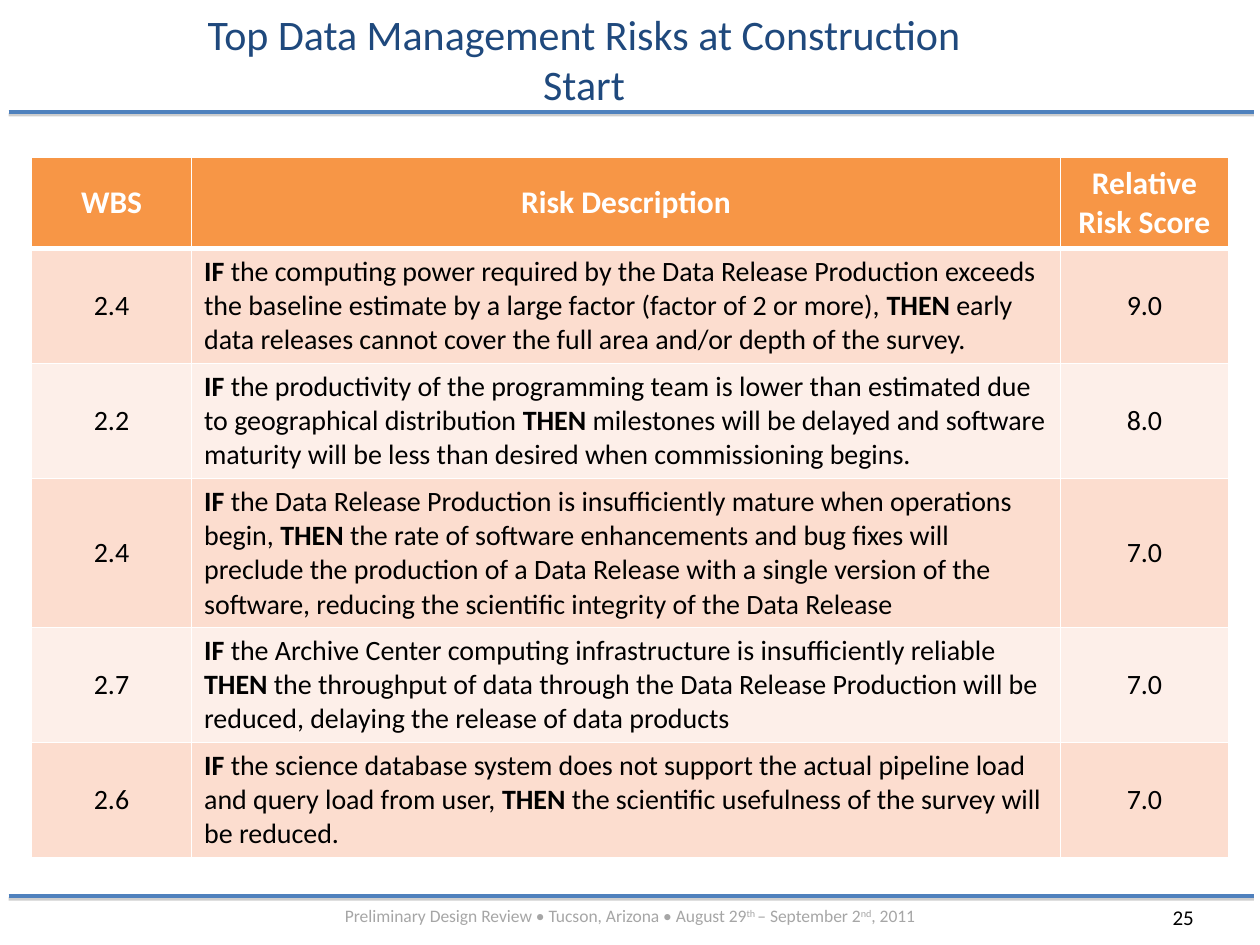
from dataclasses import dataclass

import lxml.etree
import pptx
import pptx.dml.color
import pptx.enum.shapes
import pptx.enum.text
import pptx.oxml
import pptx.oxml.ns
import pptx.util

Pt = pptx.util.Pt
ALIGN = pptx.enum.text.PP_ALIGN
ANCHOR = pptx.enum.text.MSO_ANCHOR
qn = pptx.oxml.ns.qn


@dataclass(frozen=True)
class Theme:
    font: str = "Calibri"
    title: str = "1F497D"
    rule: str = "4F81BD"
    shadow: str = "808080"
    footer: str = "A6A6A6"
    ink: str = "000000"
    white: str = "FFFFFF"
    header: str = "F79646"
    bands: tuple = ("FCDDCF", "FDEFE9")
    title_size: float = 24
    header_size: float = 18
    body_size: float = 16
    number_size: float = 12
    footer_size: float = 10


THEME = Theme()

HEADINGS = ("WBS", "Risk Description", "Relative Risk Score")
RISKS = (
    ("2.4",
     " the computing power required by the Data Release Production exceeds the baseline "
     "estimate by a large factor (factor of 2 or more), ",
     " early data releases cannot cover the full area and/or depth of the survey.",
     "9.0", 3),
    ("2.2",
     " the productivity of the programming team is lower than estimated due to "
     "geographical distribution ",
     " milestones will be delayed and software maturity will be less than desired "
     "when commissioning begins.",
     "8.0", 3),
    ("2.4",
     " the Data Release Production is insufficiently mature when operations begin, ",
     " the rate of software enhancements and bug fixes will preclude the production of a "
     "Data Release with a single version of the software, reducing the scientific "
     "integrity of the Data Release",
     "7.0", 4),
    ("2.7",
     " the Archive Center computing infrastructure is insufficiently reliable ",
     " the throughput of data through the Data Release Production will be reduced, "
     "delaying the release of data products",
     "7.0", 3),
    ("2.6",
     " the science database system does not support the actual pipeline load and query "
     "load from user, ",
     " the scientific usefulness of the survey will be reduced.",
     "7.0", 3),
)


def rgb(value):
    return pptx.dml.color.RGBColor.from_string(value)


def add_run(paragraph, text, size, color, bold=False, raised=False):
    run = paragraph.add_run()
    run.text = text
    run.font.name = THEME.font
    run.font.size = Pt(size)
    run.font.bold = bold
    run.font.color.rgb = rgb(color)
    if raised:
        run.font._element.set("baseline", "30000")


def add_label(slide, box, align, anchor=ANCHOR.TOP):
    frame = slide.shapes.add_textbox(*map(Pt, box)).text_frame
    frame.word_wrap = True
    frame.vertical_anchor = anchor
    frame.paragraphs[0].alignment = align
    return frame.paragraphs[0]


def add_rule(slide, left, top, width):
    rule = slide.shapes.add_connector(
        pptx.enum.shapes.MSO_CONNECTOR.STRAIGHT,
        Pt(left), Pt(top), Pt(left + width), Pt(top))
    rule.line.color.rgb = rgb(THEME.rule)
    rule.line.width = Pt(2)
    effects = lxml.etree.SubElement(rule._element.spPr, qn("a:effectLst"))
    shadow = lxml.etree.SubElement(
        effects, qn("a:outerShdw"), blurRad="0", dist=str(Pt(1.6)),
        dir="5400000", rotWithShape="0")
    tint = lxml.etree.SubElement(shadow, qn("a:srgbClr"), val=THEME.shadow)
    lxml.etree.SubElement(tint, qn("a:alpha"), val="38000")


def add_title(slide, box):
    title = add_label(slide, box, ALIGN.CENTER, ANCHOR.MIDDLE)
    add_run(title, "Top Data Management Risks at Construction Start",
            THEME.title_size, THEME.title)


def style_cell(cell, fill, top=1, bottom=1):
    cell.fill.solid()
    cell.fill.fore_color.rgb = rgb(fill)
    properties = cell._tc.get_or_add_tcPr()
    sides = (("lnL", 1), ("lnR", 1), ("lnT", top), ("lnB", bottom))
    for position, (side, width) in enumerate(sides):
        border = lxml.etree.Element(qn(f"a:{side}"), w=str(Pt(width)))
        paint = lxml.etree.SubElement(border, qn("a:solidFill"))
        lxml.etree.SubElement(paint, qn("a:srgbClr"), val=THEME.white)
        properties.insert(position, border)


def fill_centered(cell, text, size, color, bold=False):
    cell.vertical_anchor = ANCHOR.MIDDLE
    paragraph = cell.text_frame.paragraphs[0]
    paragraph.alignment = ALIGN.CENTER
    add_run(paragraph, text, size, color, bold)


def add_risk_table(slide, box):
    left, top, width, height = box
    table = slide.shapes.add_table(
        len(RISKS) + 1, len(HEADINGS), Pt(left), Pt(top), Pt(width), Pt(height)).table
    wbs_width, score_width = 91.5, 96
    widths = (wbs_width, width - wbs_width - score_width, score_width)
    for column, column_width in zip(table.columns, widths):
        column.width = Pt(column_width)

    line_height, padding = 19.5, 7.2
    heights = [lines * line_height + padding for *_, lines in RISKS]
    table.rows[0].height = Pt(height - sum(heights))
    for column, heading in enumerate(HEADINGS):
        cell = table.cell(0, column)
        style_cell(cell, THEME.header, bottom=3)
        fill_centered(cell, heading, THEME.header_size, THEME.white, True)

    for row, (wbs, condition, outcome, score, _) in enumerate(RISKS, 1):
        table.rows[row].height = Pt(heights[row - 1])
        for cell in table.rows[row].cells:
            style_cell(cell, THEME.bands[(row - 1) % 2], top=3 if row == 1 else 1)
        fill_centered(table.cell(row, 0), wbs, THEME.body_size, THEME.ink)
        fill_centered(table.cell(row, 2), score, THEME.body_size, THEME.ink)
        description = table.cell(row, 1).text_frame.paragraphs[0]
        for text, bold in (("IF", True), (condition, False),
                           ("THEN", True), (outcome, False)):
            add_run(description, text, THEME.body_size, THEME.ink, bold)


def add_footer(slide, box):
    left, top, width, height = box
    number = add_label(slide, (663, top, 45, height), ALIGN.LEFT)
    add_run(number, "25", THEME.number_size, THEME.ink)
    event = add_label(slide, box, ALIGN.CENTER)
    for text, raised in (
            ("Preliminary Design Review • Tucson, Arizona • August 29", False),
            ("th ", True), ("– September 2", False), ("nd", True), (", 2011", False)):
        add_run(event, text, THEME.footer_size, THEME.footer, raised=raised)


def main():
    deck = pptx.Presentation()
    deck.slide_width, deck.slide_height = Pt(720), Pt(540)
    slide = deck.slides.add_slide(deck.slide_layouts[6])
    for rule_top in (64, 512):
        add_rule(slide, 5, rule_top, 711.5)
    add_footer(slide, (36, 513.5, 648, 20))
    add_title(slide, (90, 11.5, 487.5, 44))
    add_risk_table(slide, (18, 90, 684, 400))
    deck.save("out.pptx")


if __name__ == "__main__":
    main()
